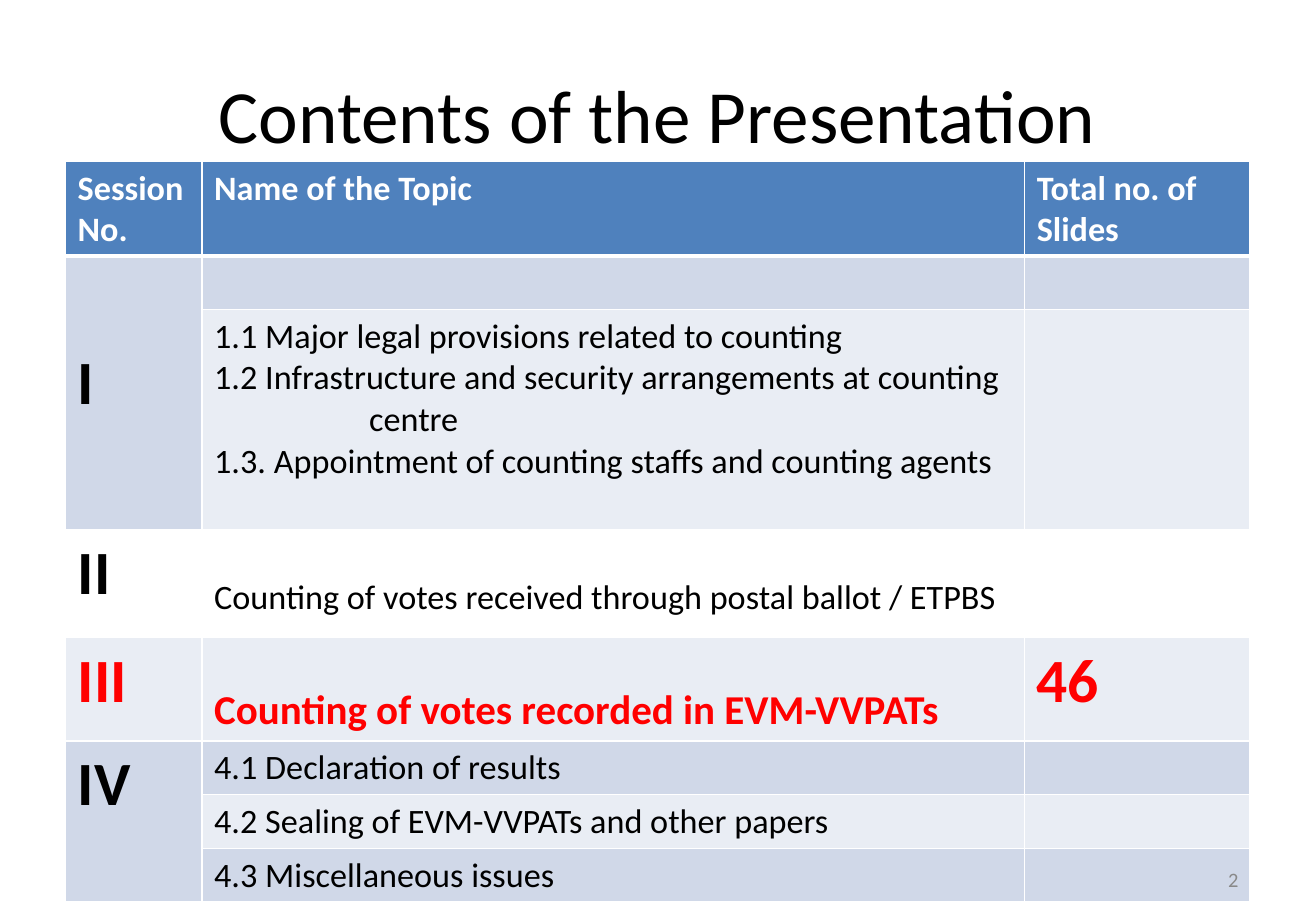
from lxml import etree
from pptx import Presentation
from pptx.dml.color import RGBColor
from pptx.enum.text import MSO_ANCHOR, PP_ALIGN
from pptx.oxml.ns import qn
from pptx.util import Cm, Pt

MIDDLE = MSO_ANCHOR.MIDDLE
CENTER, LEFT, RIGHT = PP_ALIGN.CENTER, PP_ALIGN.LEFT, PP_ALIGN.RIGHT

COLORS = {
    "white": "FFFFFF", "black": "000000", "red": "FF0000", "grey": "898989",
    "header": "4F81BD", "dark": "D0D8E8", "light": "E9EDF4",
}
FORMATS = {
    "title": ({"name": "Calibri", "size": Pt(44), "bold": False}, "black"),
    "header": ({"name": "Calibri", "size": Pt(20), "bold": True}, "white"),
    "session": ({"name": "Calibri", "size": Pt(36), "bold": True}, "black"),
    "topic": ({"name": "Calibri", "size": Pt(20), "bold": False}, "black"),
    "current_session": ({"name": "Calibri", "size": Pt(36), "bold": True}, "red"),
    "current_topic": ({"name": "Calibri", "size": Pt(24), "bold": True}, "red"),
    "number": ({"name": "Calibri", "size": Pt(12), "bold": False}, "grey"),
}
TEXT_BOXES = [
    ("Contents of the Presentation", "title", CENTER, (1.35, 0.76, 24.46, 3.18)),
    ("2", "number", RIGHT, (19.48, 17.65, 6.35, 1.02)),
]
COLUMN_WIDTHS = [2.82, 16.99, 4.65]
ROWS = [
    (1.96, "header"), (1.1, "dark"), (4.55, "light"), (2.23, "white"),
    (2.14, "light"), (1.11, "dark"), (1.11, "light"), (1.11, "dark"),
]
MERGES = [(1, 2), (5, 7)]
TOP_MARGIN, LOWERED_MARGIN, MERGED_MARGIN = 0.13, 0.99, 1.85
HANGING_INDENT = 3.2
CELLS = {
    (0, 0): ("header", TOP_MARGIN, ["Session No."]),
    (0, 1): ("header", TOP_MARGIN, ["Name of the Topic"]),
    (0, 2): ("header", TOP_MARGIN, ["Total no. of Slides"]),
    (1, 0): ("session", MERGED_MARGIN, ["I"]),
    (2, 1): ("topic", TOP_MARGIN, [
        "1.1 Major legal provisions related to counting",
        "1.2 Infrastructure and security arrangements at counting centre",
        "1.3. Appointment of counting staffs and counting agents",
    ]),
    (3, 0): ("session", TOP_MARGIN, ["II"]),
    (3, 1): ("topic", LOWERED_MARGIN,
             ["Counting of votes received through postal ballot / ETPBS"]),
    (4, 0): ("current_session", TOP_MARGIN, ["III"]),
    (4, 1): ("current_topic", LOWERED_MARGIN,
             ["Counting of votes recorded in EVM-VVPATs"]),
    (4, 2): ("current_session", TOP_MARGIN, ["46"]),
    (5, 0): ("session", TOP_MARGIN, ["IV"]),
    (5, 1): ("topic", TOP_MARGIN, ["4.1 Declaration of results"]),
    (6, 1): ("topic", TOP_MARGIN, ["4.2 Sealing of EVM-VVPATs and other papers"]),
    (7, 1): ("topic", TOP_MARGIN, ["4.3 Miscellaneous issues"]),
}


def color(name):
    return RGBColor.from_string(COLORS[name])


def write(text_frame, lines, style, alignment):
    values, color_name = FORMATS[style]
    for index, line in enumerate(lines):
        paragraph = text_frame.add_paragraph() if index else text_frame.paragraphs[0]
        paragraph.alignment = alignment
        run = paragraph.add_run()
        run.text = line
        for attribute, value in values.items():
            setattr(run.font, attribute, value)
        run.font.color.rgb = color(color_name)
        if line.startswith("1.2"):
            properties = paragraph._p.get_or_add_pPr()
            properties.set("marL", str(Cm(HANGING_INDENT)))
            properties.set("indent", str(-Cm(HANGING_INDENT)))


def add_borders(cell, row):
    widths = {"lnL": 1, "lnR": 1, "lnT": 3 if row == 1 else 1, "lnB": 1 if row else 3}
    properties = cell._tc.get_or_add_tcPr()
    for side, width in widths.items():
        line = etree.SubElement(properties, qn("a:" + side), w=str(Pt(width)))
        fill = etree.SubElement(line, qn("a:solidFill"))
        etree.SubElement(fill, qn("a:srgbClr"), val=COLORS["white"])


def add_text_box(slide, text, style, alignment, box):
    shape = slide.shapes.add_textbox(*map(Cm, box))
    shape.text_frame.word_wrap = True
    shape.text_frame.vertical_anchor = MIDDLE
    write(shape.text_frame, [text], style, alignment)


def add_contents_table(slide):
    heights = [height for height, _ in ROWS]
    size = (sum(COLUMN_WIDTHS), sum(heights))
    table = slide.shapes.add_table(
        len(ROWS), len(COLUMN_WIDTHS), Cm(1.35), Cm(3.33), *map(Cm, size)).table
    for column, width in zip(table.columns, COLUMN_WIDTHS):
        column.width = Cm(width)
    for row_index, (height, fill_name) in enumerate(ROWS):
        table.rows[row_index].height = Cm(height)
        for column_index in range(len(COLUMN_WIDTHS)):
            cell = table.cell(row_index, column_index)
            add_borders(cell, row_index)
            cell.fill.solid()
            cell.fill.fore_color.rgb = color(fill_name)
            if (row_index, column_index) in CELLS:
                style, margin, lines = CELLS[row_index, column_index]
                cell.margin_top = Cm(margin)
                write(cell.text_frame, lines, style, LEFT)
    for first, last in MERGES:
        table.cell(first, 0).merge(table.cell(last, 0))


def main():
    presentation = Presentation()
    presentation.slide_width, presentation.slide_height = Cm(27.18), Cm(19.05)
    slide = presentation.slides.add_slide(presentation.slide_layouts[6])
    title, slide_number = TEXT_BOXES
    add_text_box(slide, *title)
    add_contents_table(slide)
    add_text_box(slide, *slide_number)
    presentation.save("out.pptx")


if __name__ == "__main__":
    main()
